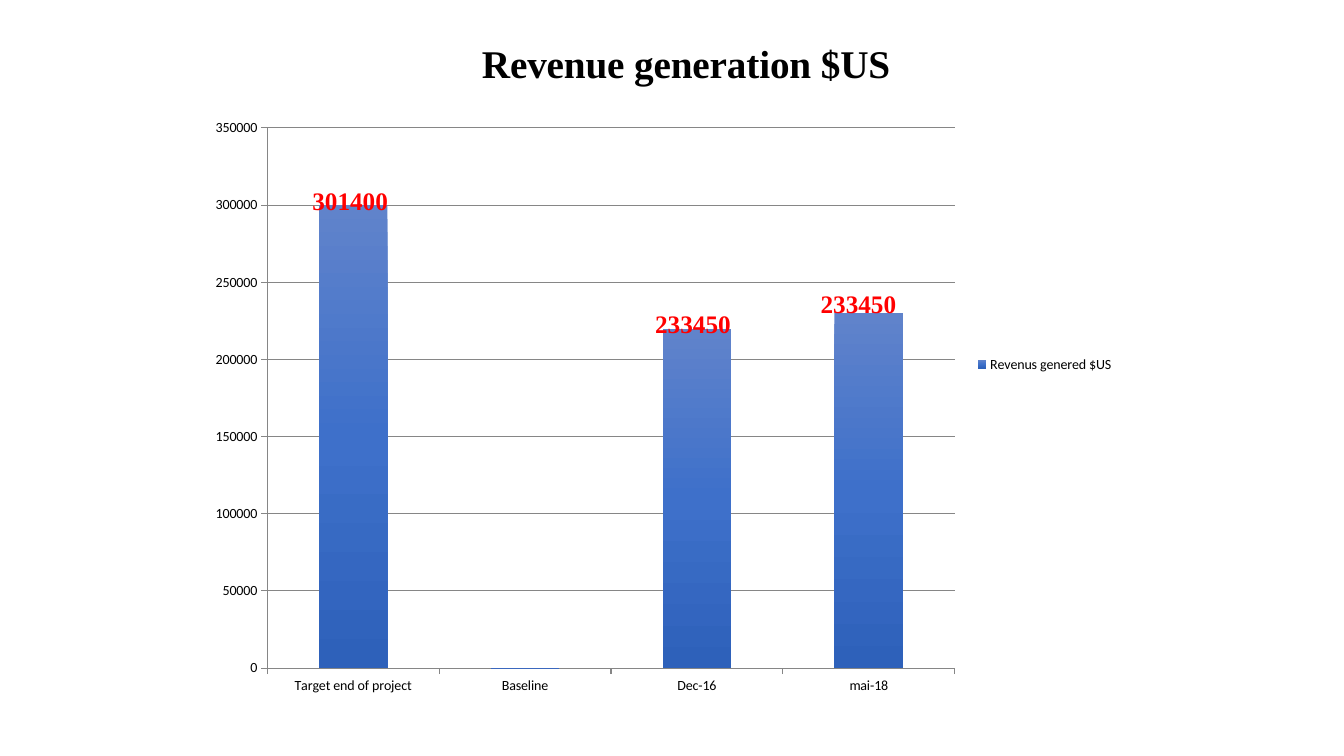
from copy import deepcopy

from lxml.etree import SubElement
from pptx import Presentation
from pptx.chart.data import CategoryChartData
from pptx.dml.color import RGBColor
from pptx.enum.chart import XL_CHART_TYPE as Chart, XL_LEGEND_POSITION as Legend, XL_TICK_MARK as Tick
from pptx.enum.text import MSO_AUTO_SIZE as AutoSize
from pptx.oxml.ns import qn
from pptx.util import Inches, Pt

COLORS = {
    "text": "000000",
    "label": "FF0000",
    "line": "868686",
    "bar_top": "6083CB",
    "bar_middle": "3E70CA",
    "bar_bottom": "2E61BA",
}
FORMATS = {
    "chart": {"name": "Calibri", "size": Pt(10), "bold": False},
    "title": {"name": "Times New Roman", "size": Pt(28), "bold": True},
    "label": {"name": "Times New Roman", "size": Pt(18), "bold": True},
}
REVENUE = {
    "Target end of project": 300000,
    "Baseline": 0,
    "Dec-16": 220000,
    "mai-18": 230000,
}
LABELS = [
    ("233450", 8.04, 2.81, 1.02),
    ("233450", 6.4, 3.01, 1.06),
    ("301400", 3, 1.79, 1.26),
]


def rgb(name):
    return RGBColor.from_string(COLORS[name])


class SlideBuilder:
    def __init__(self, prs):
        self.s = prs.slides.add_slide(prs.slide_layouts[6])

    def style(self, font, kind, color):
        for key, value in FORMATS[kind].items():
            setattr(font, key, value)
        font.color.rgb = rgb(color)

    def place(self, parent, index, **values):
        for old in parent.findall(qn("c:layout")):
            parent.remove(old)
        layout = SubElement(parent, qn("c:layout"))
        manual = SubElement(layout, qn("c:manualLayout"))
        for key, value in values.items():
            SubElement(manual, qn(f"c:{key}")).set("val", str(value))
        parent.insert(index, layout)

    def axis(self, axis):
        axis.major_tick_mark = Tick.OUTSIDE
        axis.minor_tick_mark = Tick.NONE
        axis.format.line.color.rgb = rgb("line")

    def gradient(self, series):
        fill = series.format.fill
        fill.gradient()
        fill.gradient_angle = 270
        first = series._element.find(f".//{qn('a:gs')}")
        first.addnext(deepcopy(first))
        stops = zip(fill.gradient_stops, ("bar_top", "bar_middle", "bar_bottom"), (0, 0.5, 1))
        for stop, color, position in stops:
            stop.color.rgb = rgb(color)
            stop.position = position

    def column_chart(self, title, name, values, x, y, w, h):
        data = CategoryChartData()
        data.categories = list(values)
        data.add_series(name, list(values.values()))
        chart = self.s.shapes.add_chart(
            Chart.COLUMN_CLUSTERED, Inches(x), Inches(y), Inches(w), Inches(h), data
        ).chart
        self.style(chart.font, "chart", "text")

        tf = chart.chart_title.text_frame
        r = tf.paragraphs[0].add_run()
        r.text = title
        self.style(r.font, "title", "text")
        chart.chart_title.include_in_layout = False
        self.place(chart.chart_title._element, 1, xMode="edge", yMode="edge",
                   x=2.75 / w, y=0.11 / h)

        plot = chart.plots[0]
        plot.gap_width = 150
        plot.vary_by_categories = False
        self.gradient(plot.series[0])
        area = plot._element.getparent()
        self.place(area, 0, layoutTarget="inner", xMode="edge", yMode="edge",
                   x=0.69 / w, y=1.06 / h, w=6.82 / w, h=5.36 / h)

        for axis in (chart.category_axis, chart.value_axis):
            self.axis(axis)
        scale = {"minimum_scale": 0, "maximum_scale": 350000, "major_unit": 50000}
        for key, value in scale.items():
            setattr(chart.value_axis, key, value)
        chart.value_axis.major_gridlines.format.line.color.rgb = rgb("line")

        chart.has_legend = True
        chart.legend.position = Legend.RIGHT
        chart.legend.include_in_layout = False

    def label(self, text, x, y, w, h=0.4):
        tf = self.s.shapes.add_textbox(Inches(x), Inches(y), Inches(w), Inches(h)).text_frame
        tf.word_wrap = True
        tf.auto_size = AutoSize.SHAPE_TO_FIT_TEXT
        r = tf.paragraphs[0].add_run()
        r.text = text
        self.style(r.font, "label", "label")


def main():
    prs = Presentation()
    prs.slide_width, prs.slide_height = Inches(13.33), Inches(7.5)
    builder = SlideBuilder(prs)
    builder.column_chart("Revenue generation $US", "Revenus genered $US", REVENUE,
                         1.96, 0.21, 9.19, 6.81)
    for label in LABELS:
        builder.label(*label)
    prs.save("out.pptx")


if __name__ == "__main__":
    main()
